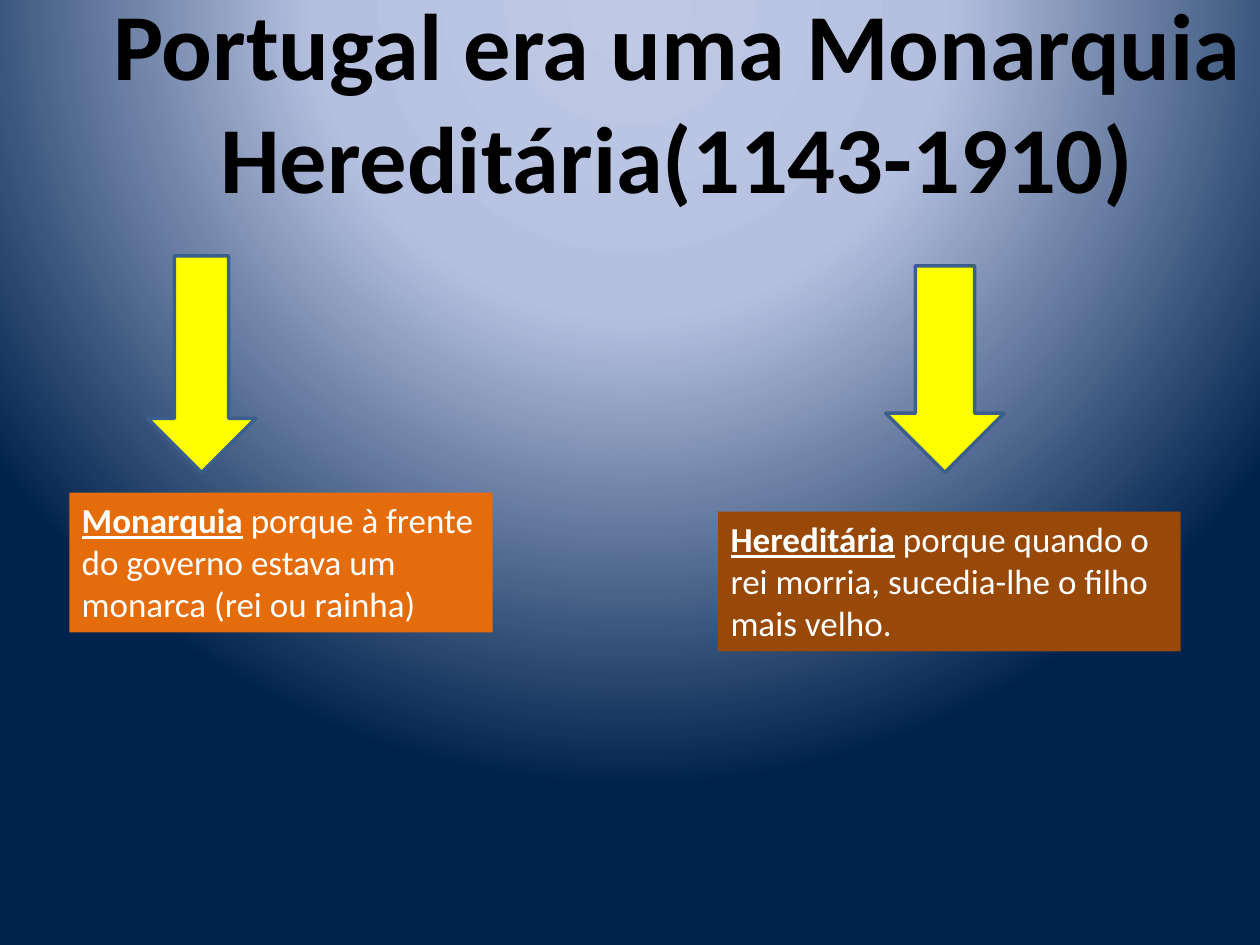
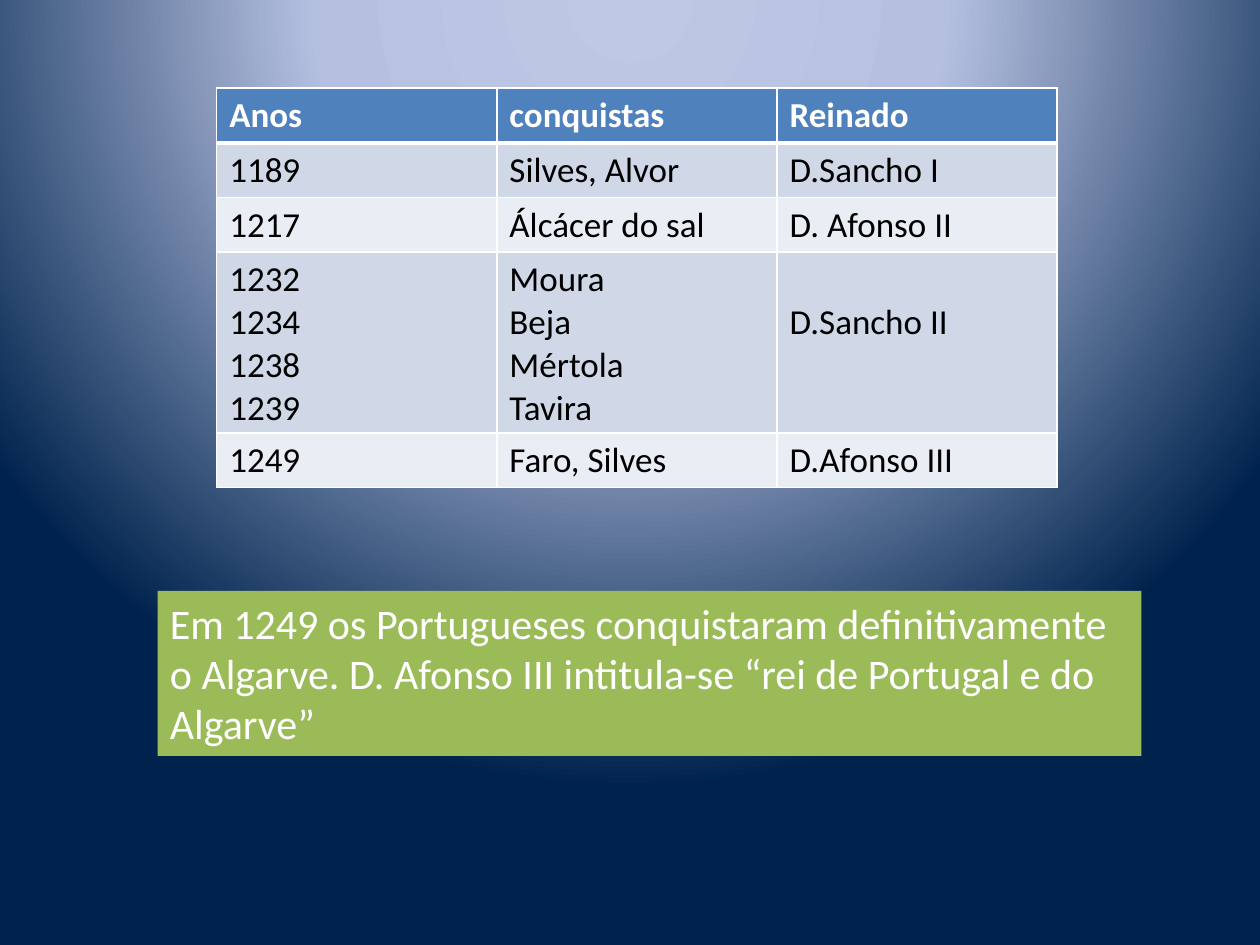
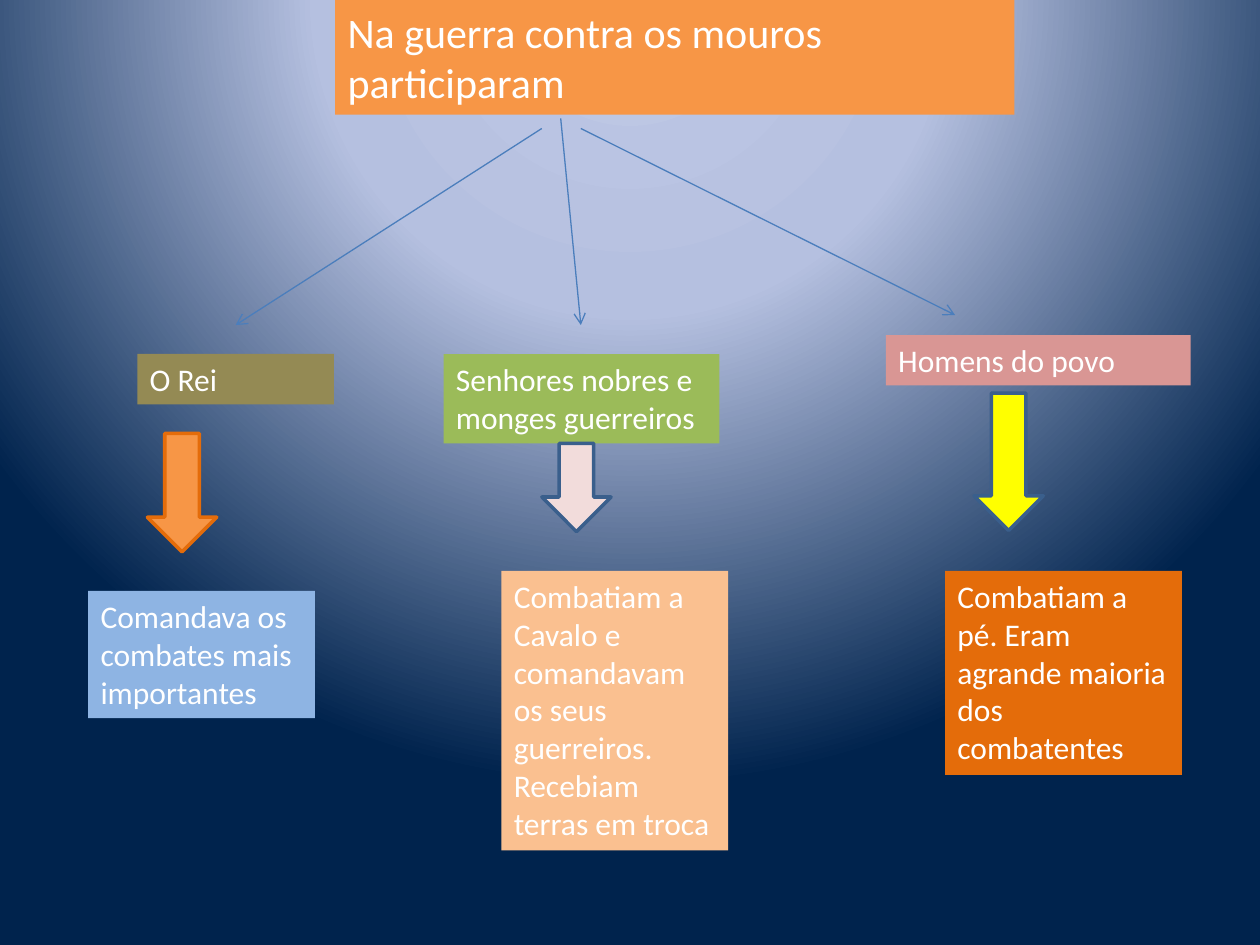
from dataclasses import dataclass

from lxml import etree
from pptx import Presentation
from pptx import util as u
from pptx.dml.color import RGBColor
from pptx.enum import shapes, text
from pptx.oxml import ns, parse_xml


@dataclass(frozen=True)
class Theme:
    font: str = "Calibri"
    black: str = "000000"
    white: str = "FFFFFF"
    yellow: str = "FFFF00"
    orange: str = "F79646"
    dark_orange: str = "E46C0A"
    peach: str = "FAC090"
    brown: str = "984807"
    olive: str = "948A54"
    green: str = "9BBB59"
    rose: str = "D99694"
    pale_rose: str = "F2DCDB"
    sky: str = "8EB4E3"
    outline: str = "3A5F8C"
    branch: str = "4B7EBC"
    header: str = "4F81BD"
    bands: tuple = ("D0D8E8", "E9EDF4")
    backdrop: tuple = ((0, "BFC9E5"), (40, "B5C0E0"), (100, "00234D"))
    title: int = 54
    lead: int = 24
    body: int = 20
    small: int = 18


T = Theme()

# Places are left, top, width, height in inches.
TITLE = ["Portugal era uma Monarquia", "Hereditária(1143-1910)"]
TITLE_PLACE = (0.75, -0.16, 9.25, 1.92)
MEANINGS = [
    {"term": "Monarquia",
     "reason": " porque à frente do governo estava um monarca (rei ou rainha)",
     "place": (0.55, 3.91, 3.36, 1.11), "color": T.dark_orange,
     "arrow": (1.17, 2.03, 0.86, 1.72)},
    {"term": "Hereditária",
     "reason": " porque quando o rei morria, sucedia-lhe o filho mais velho.",
     "place": (5.7, 4.06, 3.67, 1.11), "color": T.brown,
     "arrow": (7.03, 2.11, 0.94, 1.64)},
]

CONQUESTS = [
    ("Anos", "conquistas", "Reinado"),
    ("1189", "Silves, Alvor", "D.Sancho I"),
    ("1217", "Álcácer do sal", "D. Afonso II"),
    ("1232\n1234\n1238\n1239", "Moura\nBeja\nMértola\nTavira", "D.Sancho II"),
    ("1249", "Faro, Silves", "D.Afonso III"),
]
CONQUESTS_PLACE = (1.72, 0.7, 6.67, 3.17)
ROW_HEIGHT = 0.41
CELL_TOP, LOWERED_TOP = 0.05, 0.39
ALGARVE = ("Em 1249 os Portugueses conquistaram definitivamente o Algarve. "
           "D. Afonso III intitula-se “rei de Portugal e do Algarve”")
ALGARVE_PLACE = (1.25, 4.69, 7.81, 1.31)

WAR = "Na guerra contra os mouros participaram"
WAR_PLACE = (2.66, 0, 5.39, 0.91)
FIGHTERS = [
    {"branch": (4.3, 1.02, 1.87, 2.58),
     "who": ["O Rei"],
     "who_place": (1.09, 2.81, 1.56, 0.4), "who_color": T.olive,
     "arrow": (1.17, 3.44, 0.55, 0.94), "arrow_colors": (T.orange, T.dark_orange),
     "duty": ["Comandava os combates mais", "importantes"],
     "duty_place": (0.7, 4.69, 1.8, 1.01), "duty_color": T.sky},
    {"branch": (4.45, 0.94, 4.61, 2.58),
     "who": ["Senhores nobres e", "monges guerreiros"],
     "who_place": (3.52, 2.81, 2.19, 0.71), "who_color": T.green,
     "arrow": (4.3, 3.52, 0.55, 0.7), "arrow_colors": (T.pale_rose, T.outline),
     "duty": ["Combatiam a",
              "Cavalo e comandavam os seus guerreiros. Recebiam terras em troca"],
     "duty_place": (3.98, 4.53, 1.8, 2.22), "duty_color": T.peach},
    {"branch": (4.61, 1.02, 7.58, 2.5),
     "who": ["Homens do povo"],
     "who_place": (7.03, 2.66, 2.42, 0.4), "who_color": T.rose,
     "arrow": (7.73, 3.12, 0.55, 1.09), "arrow_colors": (T.yellow, T.outline),
     "duty": ["Combatiam a pé. Eram agrande maioria dos combatentes"],
     "duty_place": (7.5, 4.53, 1.88, 1.62), "duty_color": T.dark_orange},
]


def inches(place):
    return [u.Inches(length) for length in place]


def rgb(color):
    return RGBColor.from_string(color)


def apply(target, formats):
    for name, value in formats.items():
        setattr(target, name, value)


def paint(fill, color):
    fill.solid()
    fill.fore_color.rgb = rgb(color)


def write(frame, paragraphs, size, color=T.white, align=text.PP_ALIGN.LEFT, **formats):
    """Each paragraph is a string, or a list of (words, extra font formats)."""
    for index, content in enumerate(paragraphs):
        paragraph = frame.paragraphs[0] if index == 0 else frame.add_paragraph()
        paragraph.alignment = align
        for words, extra in [(content, {})] if isinstance(content, str) else content:
            run = paragraph.add_run()
            run.text = words
            apply(run.font, {"name": T.font, "size": u.Pt(size), **formats, **extra})
            run.font.color.rgb = rgb(color)


def add_box(slide, place, color, paragraphs, size):
    box = slide.shapes.add_shape(shapes.MSO_SHAPE.RECTANGLE, *inches(place))
    box.shadow.inherit = False
    paint(box.fill, color)
    box.line.fill.background()
    apply(box.text_frame, {"word_wrap": True,
                           "vertical_anchor": text.MSO_ANCHOR.TOP,
                           "auto_size": text.MSO_AUTO_SIZE.SHAPE_TO_FIT_TEXT})
    write(box.text_frame, paragraphs, size)


def add_down_arrow(slide, place, color=T.yellow, outline=T.outline):
    arrow = slide.shapes.add_shape(shapes.MSO_SHAPE.DOWN_ARROW, *inches(place))
    arrow.shadow.inherit = False
    paint(arrow.fill, color)
    paint(arrow.line.fill, outline)
    arrow.line.width = u.Pt(2)


def add_branch(slide, ends):
    branch = slide.shapes.add_connector(shapes.MSO_CONNECTOR.STRAIGHT, *inches(ends))
    paint(branch.line.fill, T.branch)
    branch.line.width = u.Pt(0.75)
    etree.SubElement(branch.line._get_or_add_ln(), ns.qn("a:tailEnd"), type="arrow")
    etree.SubElement(branch.element.spPr, ns.qn("a:effectLst"))


def set_borders(cell, widths):
    """Widths in points, keyed by side in the order L, R, T, B."""
    properties = cell._tc.get_or_add_tcPr()
    for index, (side, width) in enumerate(widths.items()):
        properties.insert(index, parse_xml(
            f'<a:ln{side} {ns.nsdecls("a")} w="{u.Pt(width)}"><a:solidFill>'
            f'<a:srgbClr val="{T.white}"/></a:solidFill></a:ln{side}>'))


def set_backdrop(master):
    master.background.fill.solid()
    stops = "".join(f'<a:gs pos="{position * 1000}"><a:srgbClr val="{color}"/></a:gs>'
                    for position, color in T.backdrop)
    properties = master.element.find(".//" + ns.qn("p:bgPr"))
    properties.replace(properties[0], parse_xml(
        f'<a:gradFill {ns.nsdecls("a")} rotWithShape="1"><a:gsLst>{stops}</a:gsLst>'
        '<a:path path="circle"><a:fillToRect l="50000" t="-80000" r="50000" b="180000"/>'
        '</a:path></a:gradFill>'))


def build_monarchy(slide):
    title = slide.shapes.add_textbox(*inches(TITLE_PLACE)).text_frame
    apply(title, {"word_wrap": False,
                  "auto_size": text.MSO_AUTO_SIZE.SHAPE_TO_FIT_TEXT})
    write(title, TITLE, T.title, T.black, text.PP_ALIGN.CENTER, bold=True)
    for meaning in MEANINGS:
        add_down_arrow(slide, meaning["arrow"])
        sentence = [(meaning["term"], {"bold": True, "underline": True}),
                    (meaning["reason"], {})]
        add_box(slide, meaning["place"], meaning["color"], [sentence], T.body)


def build_conquests(slide):
    frame = slide.shapes.add_table(len(CONQUESTS), len(CONQUESTS[0]),
                                   *inches(CONQUESTS_PLACE))
    table = frame.table
    for row, entries in enumerate(CONQUESTS):
        table.rows[row].height = u.Inches(ROW_HEIGHT)
        is_header = row == 0
        tallest = max(entry.count("\n") for entry in entries)
        for column, entry in enumerate(entries):
            cell = table.cell(row, column)
            lowered = entry.count("\n") < tallest
            cell.margin_top = u.Inches(LOWERED_TOP if lowered else CELL_TOP)
            paint(cell.fill, T.header if is_header else T.bands[(row - 1) % 2])
            set_borders(cell, {"L": 1, "R": 1, "T": 3 if row == 1 else 1,
                               "B": 3 if is_header else 1})
            write(cell.text_frame, entry.split("\n"), T.body,
                  T.white if is_header else T.black, bold=is_header)
    frame.height = u.Inches(CONQUESTS_PLACE[3])
    add_box(slide, ALGARVE_PLACE, T.green, [ALGARVE], T.lead)


def build_war(slide):
    add_box(slide, WAR_PLACE, T.orange, [WAR], T.lead)
    for fighter in FIGHTERS:
        add_branch(slide, fighter["branch"])
        add_box(slide, fighter["who_place"], fighter["who_color"], fighter["who"], T.small)
        add_down_arrow(slide, fighter["arrow"], *fighter["arrow_colors"])
        add_box(slide, fighter["duty_place"], fighter["duty_color"], fighter["duty"], T.small)


def main():
    deck = Presentation()
    deck.slide_width, deck.slide_height = inches((10, 7.5))
    set_backdrop(deck.slide_master)
    for build in (build_monarchy, build_conquests, build_war):
        build(deck.slides.add_slide(deck.slide_layouts[6]))
    deck.save("out.pptx")


if __name__ == "__main__":
    main()
